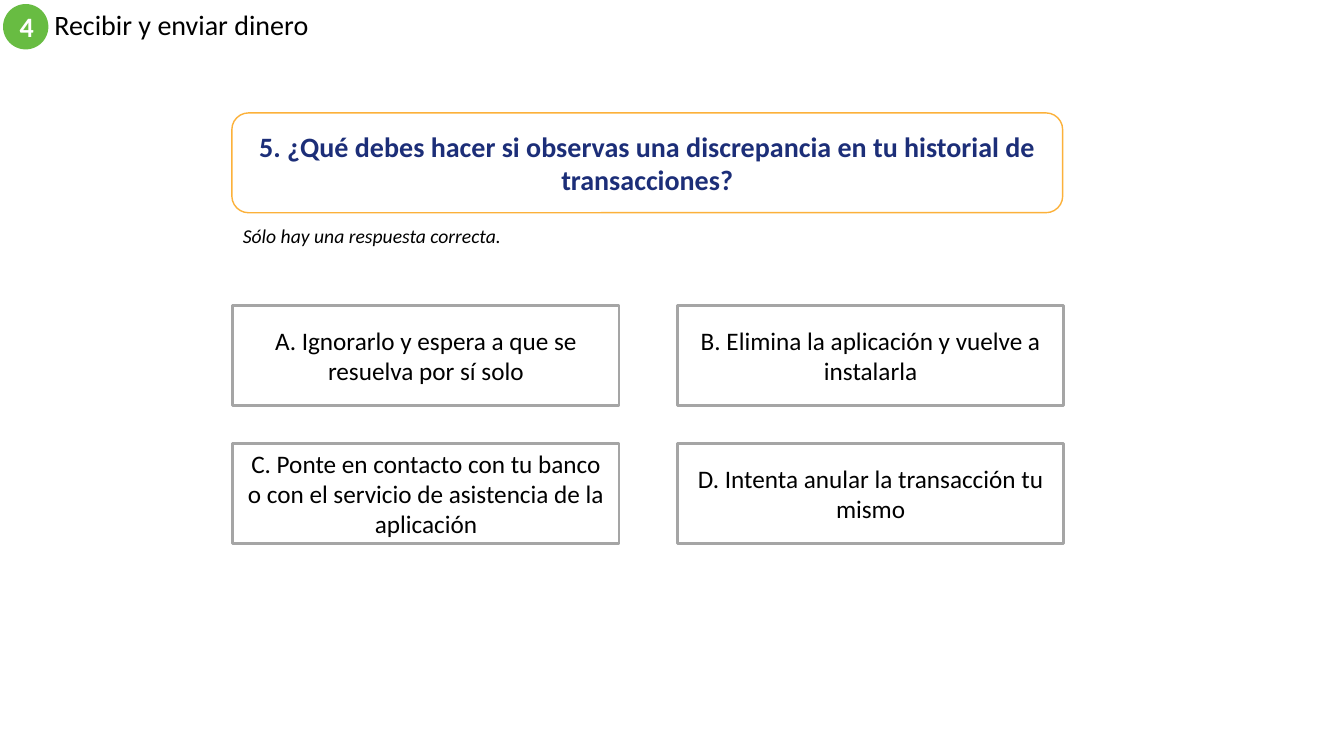
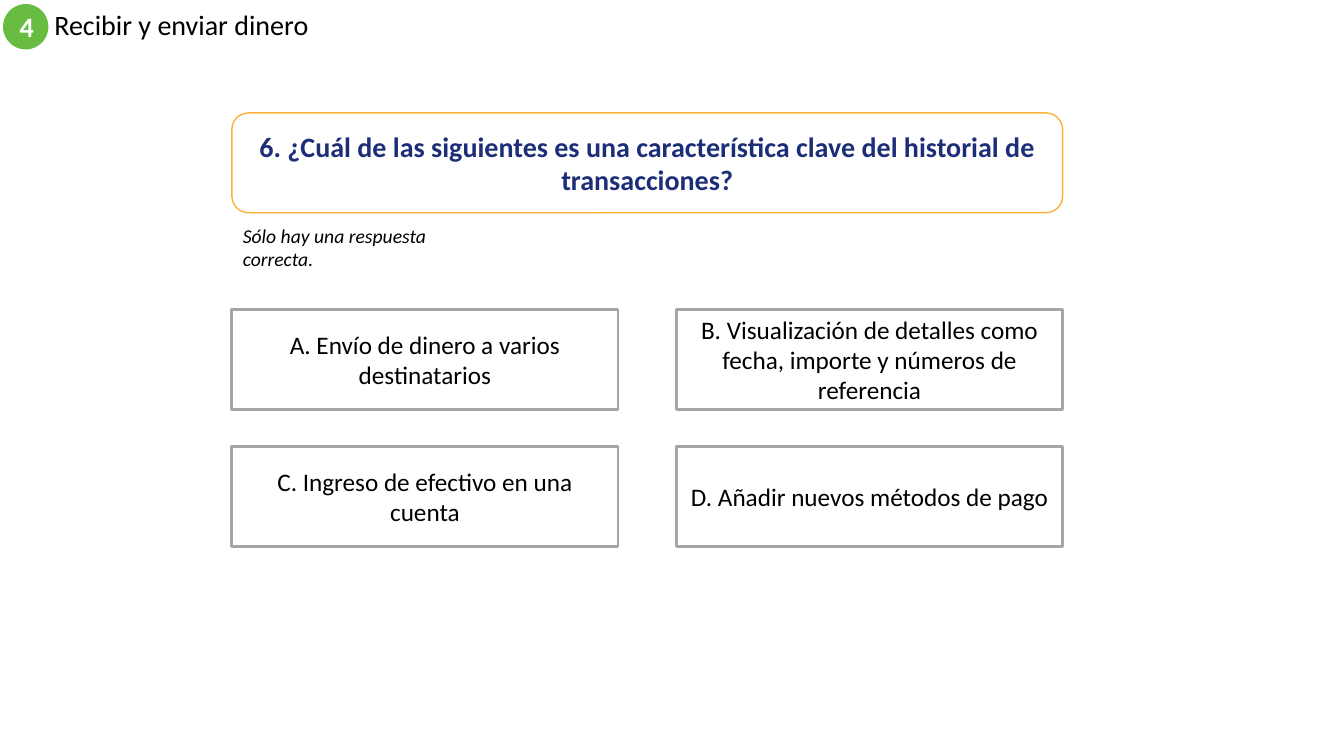
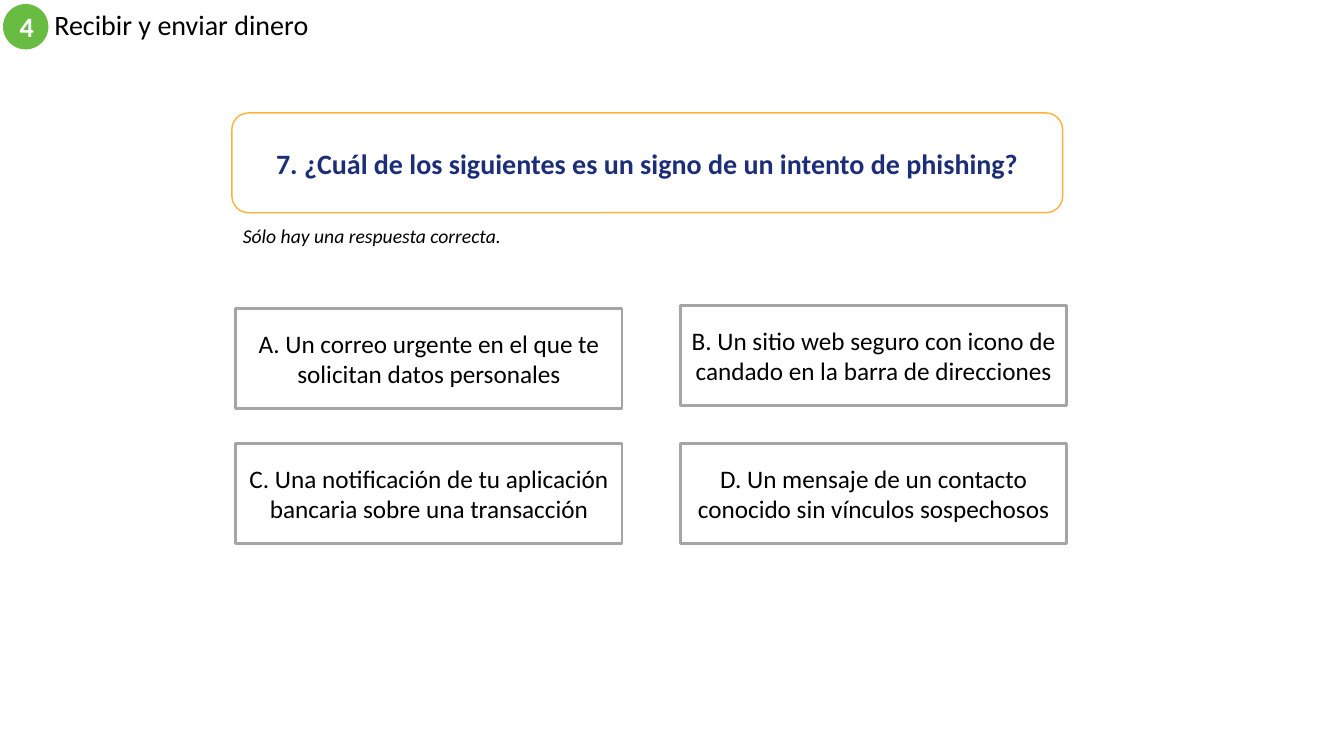
from dataclasses import dataclass

from pptx import Presentation
from pptx.dml.color import RGBColor
from pptx.enum.shapes import MSO_SHAPE as Shape
from pptx.enum.text import MSO_ANCHOR as Anchor, PP_ALIGN as Align
from pptx.util import Inches, Pt


@dataclass(frozen=True)
class Theme:
    font: str = "Calibri"
    green: str = "68BC42"
    orange: str = "FCB13A"
    navy: str = "1C2E78"
    gray: str = "A5A5A5"
    white: str = "FFFFFF"
    black: str = "000000"
    heading_size: int = 20
    answer_size: int = 18
    note_size: int = 14


theme = Theme()


def add_panel(slide, kind, place, fill, line=None, line_width=1):
    panel = slide.shapes.add_shape(kind, *map(Inches, place))
    panel.shadow.inherit = False
    panel.fill.solid()
    panel.fill.fore_color.rgb = RGBColor.from_string(fill)
    if line:
        panel.line.color.rgb = RGBColor.from_string(line)
        panel.line.width = Pt(line_width)
    else:
        panel.line.fill.background()
    return panel


def write(box, text, size, color, bold=False, italic=False, align=Align.CENTER, anchor=Anchor.MIDDLE):
    frame = box.text_frame
    frame.word_wrap = True
    frame.vertical_anchor = anchor
    para = frame.paragraphs[0]
    para.alignment = align
    span = para.add_run()
    span.text = text
    span.font.name = theme.font
    span.font.size = Pt(size)
    span.font.bold = bold
    span.font.italic = italic
    span.font.color.rgb = RGBColor.from_string(color)
    return para


answer_width, answer_height = 3.83, 0.99
column_step = 4.41

questions = [
    {
        "text": "5. ¿Qué debes hacer si observas una discrepancia en tu historial de transacciones?",
        "note_width": 2.84,
        "left": 2.31,
        "tops": [3.03, 3.03, 4.4, 4.4],
        "answers": [
            "A. Ignorarlo y espera a que se resuelva por sí solo",
            "B. Elimina la aplicación y vuelve a instalarla",
            "C. Ponte en contacto con tu banco o con el servicio de asistencia de la aplicación",
            "D. Intenta anular la transacción tu mismo",
        ],
    },
    {
        "text": "6. ¿Cuál de las siguientes es una característica clave del historial de transacciones?",
        "note_width": 2.36,
        "left": 2.3,
        "tops": [3.07, 3.07, 4.43, 4.43],
        "answers": [
            "A. Envío de dinero a varios destinatarios",
            "B. Visualización de detalles como fecha, importe y números de referencia",
            "C. Ingreso de efectivo en una cuenta",
            "D. Añadir nuevos métodos de pago",
        ],
    },
    {
        "text": "7. ¿Cuál de los siguientes es un signo de un intento de phishing?",
        "note_width": 2.97,
        "left": 2.34,
        "tops": [3.06, 3.03, 4.4, 4.4],
        "answers": [
            "A. Un correo urgente en el que te solicitan datos personales",
            "B. Un sitio web seguro con icono de candado en la barra de direcciones",
            "C. Una notificación de tu aplicación bancaria sobre una transacción",
            "D. Un mensaje de un contacto conocido sin vínculos sospechosos",
        ],
    },
]

deck = Presentation()
deck.slide_width = Inches(13.33)
deck.slide_height = Inches(7.5)
blank_layout = deck.slide_layouts[6]

for question in questions:
    page = deck.slides.add_slide(blank_layout)

    badge = add_panel(page, Shape.OVAL, (0.03, 0.04, 0.45, 0.45), theme.green)
    write(badge, "4", theme.heading_size, theme.white, bold=True)

    title = page.shapes.add_textbox(Inches(0.44), Inches(0.04), Inches(8), Inches(0.45))
    title_para = write(title, "Recibir y enviar dinero", theme.heading_size, theme.black, align=Align.LEFT)
    title_para.line_spacing = 0.9

    question_box = add_panel(
        page, Shape.ROUNDED_RECTANGLE, (2.3, 1.12, 8.24, 0.99), theme.white, theme.orange
    )
    write(question_box, question["text"], theme.heading_size, theme.navy, bold=True)

    note = page.shapes.add_textbox(
        Inches(2.31), Inches(2.17), Inches(question["note_width"]), Inches(0.34)
    )
    write(
        note, "Sólo hay una respuesta correcta.", theme.note_size, theme.black,
        italic=True, align=Align.LEFT, anchor=Anchor.TOP,
    )

    for index, (answer, top) in enumerate(zip(question["answers"], question["tops"])):
        left = question["left"] + index % 2 * column_step
        answer_box = add_panel(
            page, Shape.RECTANGLE, (left, top, answer_width, answer_height),
            theme.white, theme.gray, line_width=2,
        )
        write(answer_box, answer, theme.answer_size, theme.black)

deck.save("out.pptx")
